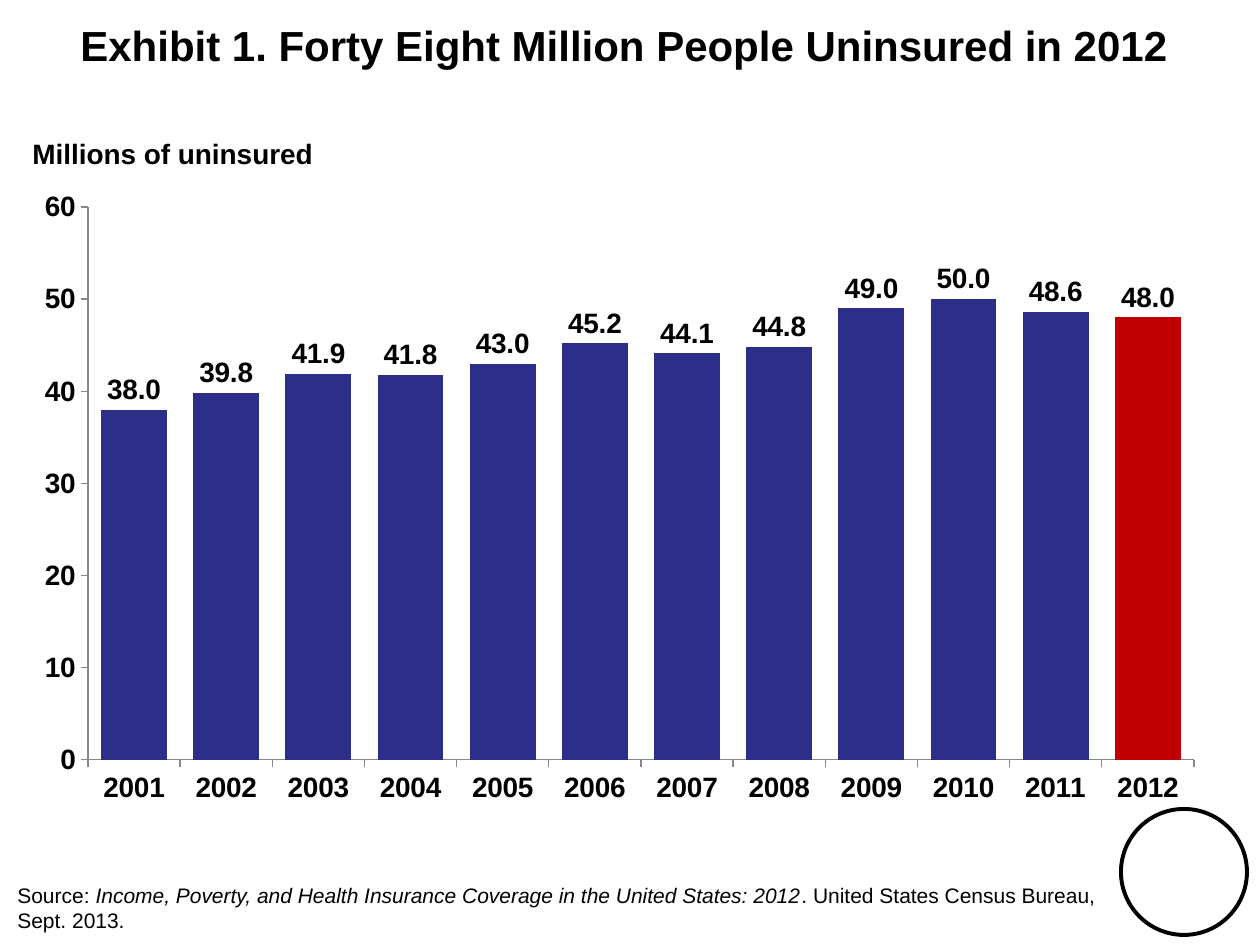
from dataclasses import dataclass

from lxml import etree
from pptx import Presentation
from pptx.chart.data import CategoryChartData
from pptx.dml.color import RGBColor
from pptx.enum.chart import XL_CHART_TYPE, XL_LABEL_POSITION, XL_TICK_MARK
from pptx.enum.shapes import MSO_SHAPE
from pptx.enum.text import PP_ALIGN
from pptx.util import Emu, Pt

COLUMNS = XL_CHART_TYPE.COLUMN_CLUSTERED
ABOVE_BAR = XL_LABEL_POSITION.OUTSIDE_END
TICK_OUT, TICK_NONE = XL_TICK_MARK.OUTSIDE, XL_TICK_MARK.NONE
LEFT, CENTER = PP_ALIGN.LEFT, PP_ALIGN.CENTER
OVAL = MSO_SHAPE.OVAL

PX = 914400 / 126
FONT = "Arial"
BLACK, NAVY, RED, GRAY = "000000", "2D2D8A", "C00000", "868686"
FIRST_YEAR = 2001
UNINSURED = (38, 39.8, 41.9, 41.8, 43, 45.2, 44.1, 44.8, 49, 50, 48.6, 48)


@dataclass(frozen=True)
class Box:
    left: int
    top: int
    width: int
    height: int

    def emu(self) -> tuple[Emu, ...]:
        return tuple(px(n) for n in (self.left, self.top, self.width, self.height))


@dataclass(frozen=True)
class Run:
    text: str
    italic: bool = False


@dataclass(frozen=True)
class Caption:
    box: Box
    runs: tuple[Run, ...]
    size: int
    bold: bool = False
    align: int = LEFT


CHART_BOX = Box(21, 179, 1197, 638)
PLOT_BOX = Box(88, 207, 1106, 553)
SEAL_BOX = Box(1121, 809, 126, 126)
CAPTIONS = (
    Caption(Box(0, 13, 1260, 101),
            (Run("Exhibit 1. Forty Eight Million People Uninsured in 2012 "),),
            24, True, CENTER),
    Caption(Box(20, 130, 328, 47), (Run("Millions of uninsured"),), 16, True),
    Caption(Box(5, 876, 1148, 63),
            (Run("Source: "),
             Run("Income, Poverty, and Health Insurance Coverage in the United States: 2012", True),
             Run(". United States Census Bureau, Sept. 2013.")), 12),
)


def px(length: int) -> Emu:
    return Emu(round(length * PX))


def rgb(color: str) -> RGBColor:
    return RGBColor.from_string(color)


def set_font(font, size: int, **extra) -> None:
    formats = {"name": FONT, "size": Pt(size), **extra}
    for attribute, value in formats.items():
        setattr(font, attribute, value)
    font.color.rgb = rgb(BLACK)


def add_caption(slide, caption: Caption) -> None:
    frame = slide.shapes.add_textbox(*caption.box.emu()).text_frame
    frame.word_wrap = True
    paragraph = frame.paragraphs[0]
    paragraph.alignment = caption.align
    for part in caption.runs:
        run = paragraph.add_run()
        run.text = part.text
        set_font(run.font, caption.size, bold=caption.bold, italic=part.italic)


def place_plot(chart, outer: Box, inner: Box) -> None:
    plot_area = chart.plots[0]._element.getparent()
    namespace = etree.QName(plot_area).namespace
    for old in plot_area.findall(f"{{{namespace}}}layout"):
        plot_area.remove(old)
    layout = etree.Element(f"{{{namespace}}}layout")
    manual = etree.SubElement(layout, f"{{{namespace}}}manualLayout")
    settings = {
        "layoutTarget": "inner", "xMode": "edge", "yMode": "edge",
        "x": (inner.left - outer.left) / outer.width,
        "y": (inner.top - outer.top) / outer.height,
        "w": inner.width / outer.width,
        "h": inner.height / outer.height,
    }
    for tag, value in settings.items():
        etree.SubElement(manual, f"{{{namespace}}}{tag}", val=str(value))
    plot_area.insert(0, layout)


def add_uninsured_chart(slide) -> None:
    data = CategoryChartData(number_format="0.0")
    data.categories = [str(FIRST_YEAR + i) for i in range(len(UNINSURED))]
    data.add_series("Series 1", UNINSURED)
    chart = slide.shapes.add_chart(COLUMNS, *CHART_BOX.emu(), data).chart
    chart.has_legend = chart.has_title = False
    set_font(chart.font, 16, bold=True)
    place_plot(chart, CHART_BOX, PLOT_BOX)

    for axis in (chart.category_axis, chart.value_axis):
        axis.major_tick_mark, axis.minor_tick_mark = TICK_OUT, TICK_NONE
        axis.has_major_gridlines = False
        axis.format.line.color.rgb = rgb(GRAY)
    scale = {"minimum_scale": 0, "maximum_scale": 60, "major_unit": 10}
    for attribute, value in scale.items():
        setattr(chart.value_axis, attribute, value)
    chart.value_axis.tick_labels.number_format = "0"
    chart.value_axis.tick_labels.number_format_is_linked = False

    plot = chart.plots[0]
    plot.gap_width, plot.vary_by_categories = 40, False
    bars = plot.series[0]
    latest_bar = bars.points[len(UNINSURED) - 1]
    for item, color in ((bars, NAVY), (latest_bar, RED)):
        item.format.fill.solid()
        item.format.fill.fore_color.rgb = rgb(color)
    labels = bars.data_labels
    label_format = {"show_value": True, "number_format": "0.0",
                    "number_format_is_linked": False, "position": ABOVE_BAR}
    for attribute, value in label_format.items():
        setattr(labels, attribute, value)
    set_font(labels.font, 16, bold=True)


def add_seal(slide) -> None:
    seal = slide.shapes.add_shape(OVAL, *SEAL_BOX.emu())
    seal.shadow.inherit = False
    seal.fill.background()
    seal.line.color.rgb = rgb(BLACK)
    seal.line.width = Pt(2.25)


def main() -> None:
    deck = Presentation()
    deck.slide_width, deck.slide_height = px(1260), px(945)
    slide = deck.slides.add_slide(deck.slide_layouts[6])
    add_seal(slide)
    for caption in CAPTIONS:
        add_caption(slide, caption)
    add_uninsured_chart(slide)
    deck.save("out.pptx")


if __name__ == "__main__":
    main()
